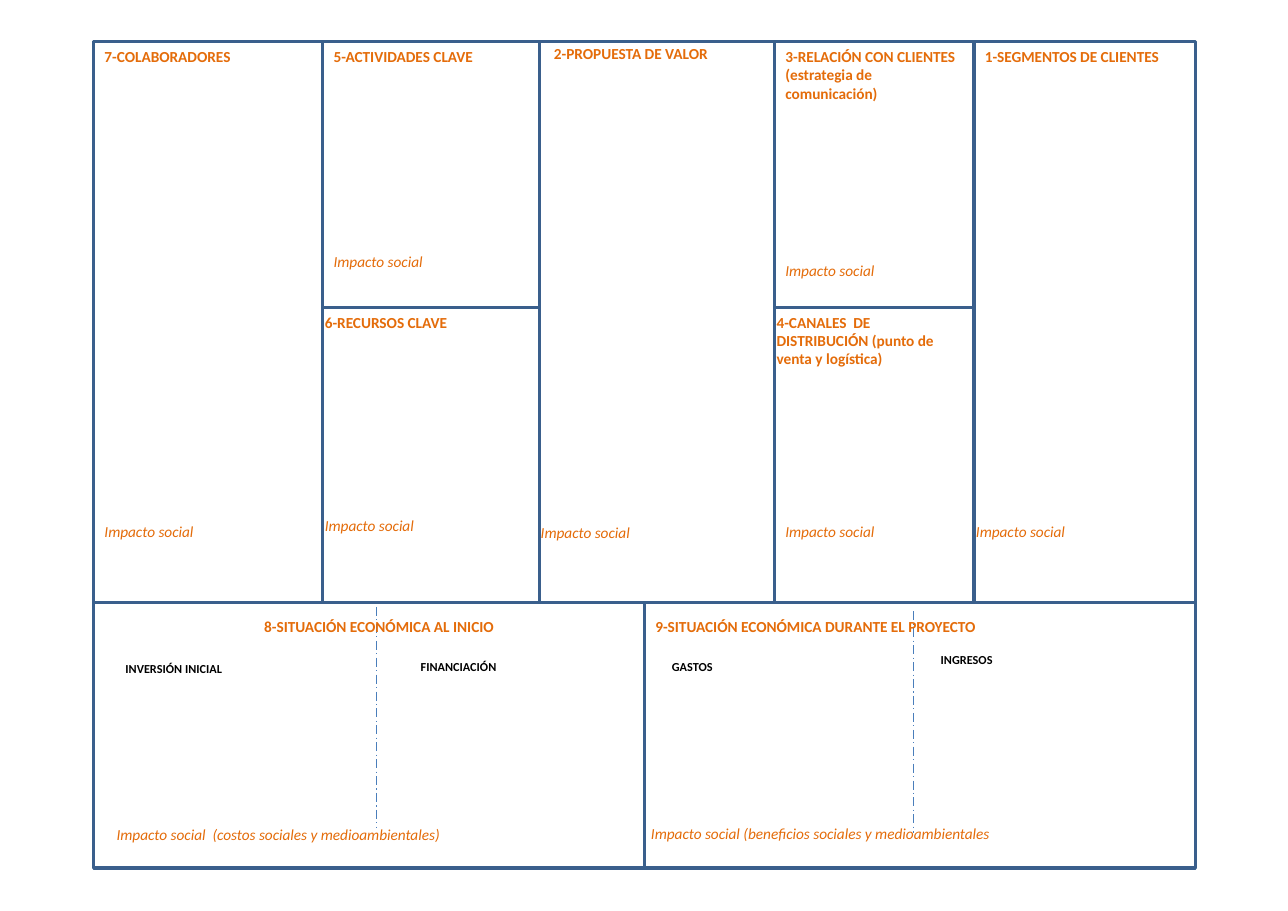
from dataclasses import dataclass

from pptx import Presentation
from pptx.dml.color import RGBColor
from pptx.enum.dml import MSO_LINE_DASH_STYLE as Dash
from pptx.enum.shapes import MSO_CONNECTOR as Link, MSO_SHAPE as Shape
from pptx.oxml.ns import qn
from pptx.util import Inches, Pt
from lxml.etree import SubElement

BLUE = RGBColor(0x3A, 0x5F, 0x8C)
LIGHT = RGBColor(0x4A, 0x7E, 0xBB)
ORANGE = RGBColor(0xE4, 0x6C, 0x0A)
BLACK = RGBColor(0, 0, 0)

COLS = (0.85, 2.93, 4.9, 7.03, 8.84, 10.85)
ROWS = (0.38, 2.79, 5.47, 7.88)
HALVES = (COLS[0], 5.85, COLS[-1])
IMPACT = "Impacto social"


@dataclass
class Note:
    text: str
    dx: float = 0
    dy: float = 0
    width: float = 2
    height: float = 0.27


@dataclass
class Cell:
    col: int
    top: int
    end: int
    title: Note
    impact: Note
    edges: tuple[float, ...] = COLS
    labels: tuple[Note, ...] = ()
    split: tuple[float, float] | None = None

    @property
    def left(self) -> float:
        return self.edges[self.col]

    @property
    def width(self) -> float:
        return self.edges[self.col + 1] - self.left


CELLS = (
    Cell(0, 0, 2, Note("7-COLABORADORES"), Note(IMPACT, 0, 4.31)),
    Cell(1, 0, 1, Note("5-ACTIVIDADES CLAVE"), Note(IMPACT, 0, 1.86)),
    Cell(1, 1, 2, Note("6-RECURSOS CLAVE", -0.08), Note(IMPACT, -0.08, 1.85)),
    Cell(2, 0, 2, Note("2-PROPUESTA DE VALOR", 0.03, -0.03),
         Note(IMPACT, -0.09, 4.32)),
    Cell(3, 0, 1,
         Note("3-RELACIÓN CON CLIENTES (estrategia de comunicación)",
              0, 0, 1.81, 0.91),
         Note(IMPACT, 0, 1.94)),
    Cell(3, 1, 2,
         Note("4-CANALES  DE DISTRIBUCIÓN (punto de venta y logística)",
              -0.08, 0, 1.89, 0.93),
         Note(IMPACT, 0, 1.9)),
    Cell(4, 0, 2, Note("1-SEGMENTOS DE CLIENTES"), Note(IMPACT, -0.08, 4.31)),
    Cell(0, 2, 3,
         Note("8-SITUACIÓN ECONÓMICA AL INICIO", 1.45, 0.08, 2.76),
         Note("Impacto social  (costos sociales y medioambientales)",
              0.11, 1.97, 3.48),
         HALVES,
         (Note("INVERSIÓN INICIAL", 0.19, 0.48),
          Note("FINANCIACIÓN", 2.87, 0.47)),
         (2.57, 0.04)),
    Cell(1, 2, 3,
         Note("9-SITUACIÓN ECONÓMICA DURANTE EL PROYECTO", 0, 0.08, 5),
         Note("Impacto social (beneficios sociales y medioambientales",
              -0.04, 1.96, 4.92),
         HALVES,
         (Note("GASTOS", 0.15, 0.47), Note("INGRESOS", 2.59, 0.4)),
         (2.44, 0.08)),
)


def write(shapes, cell: Cell, note: Note, *, size: int = 10,
          color: RGBColor = ORANGE, bold: bool = False,
          italic: bool = False) -> None:
    box = shapes.add_textbox(
        Inches(cell.left + note.dx), Inches(ROWS[cell.top] + note.dy),
        Inches(note.width), Inches(note.height))
    box.text_frame.word_wrap = True
    run = box.text_frame.paragraphs[0].add_run()
    run.text = note.text
    font = run.font
    font.name, font.size = "Calibri", Pt(size)
    font.bold, font.italic = bold, italic
    font.color.rgb = color


def frame(shapes, cell: Cell) -> None:
    top = ROWS[cell.top]
    box = shapes.add_shape(
        Shape.RECTANGLE, Inches(cell.left), Inches(top),
        Inches(cell.width), Inches(ROWS[cell.end] - top))
    box.shadow.inherit = False
    box.fill.background()
    box.line.color.rgb = BLUE
    box.line.width = Pt(2)


def divide(shapes, cell: Cell, dx: float, dy: float) -> None:
    x, y = Inches(cell.left + dx), Inches(ROWS[cell.top] + dy)
    rule = shapes.add_connector(Link.STRAIGHT, x, y, x, y + Inches(2.01))
    rule.line.color.rgb = LIGHT
    rule.line.width = Pt(0.75)
    rule.line.dash_style = Dash.LONG_DASH_DOT
    SubElement(rule.element.spPr, qn("a:effectLst"))


def main() -> None:
    deck = Presentation()
    deck.slide_width, deck.slide_height = Inches(11.69), Inches(8.27)
    shapes = deck.slides.add_slide(deck.slide_layouts[6]).shapes
    for cell in CELLS:
        frame(shapes, cell)
    for cell in CELLS:
        if cell.split:
            divide(shapes, cell, *cell.split)
        write(shapes, cell, cell.title, bold=True)
        write(shapes, cell, cell.impact, italic=True)
        for label in cell.labels:
            write(shapes, cell, label, size=8, color=BLACK, bold=True)
    deck.save("out.pptx")


if __name__ == "__main__":
    main()
